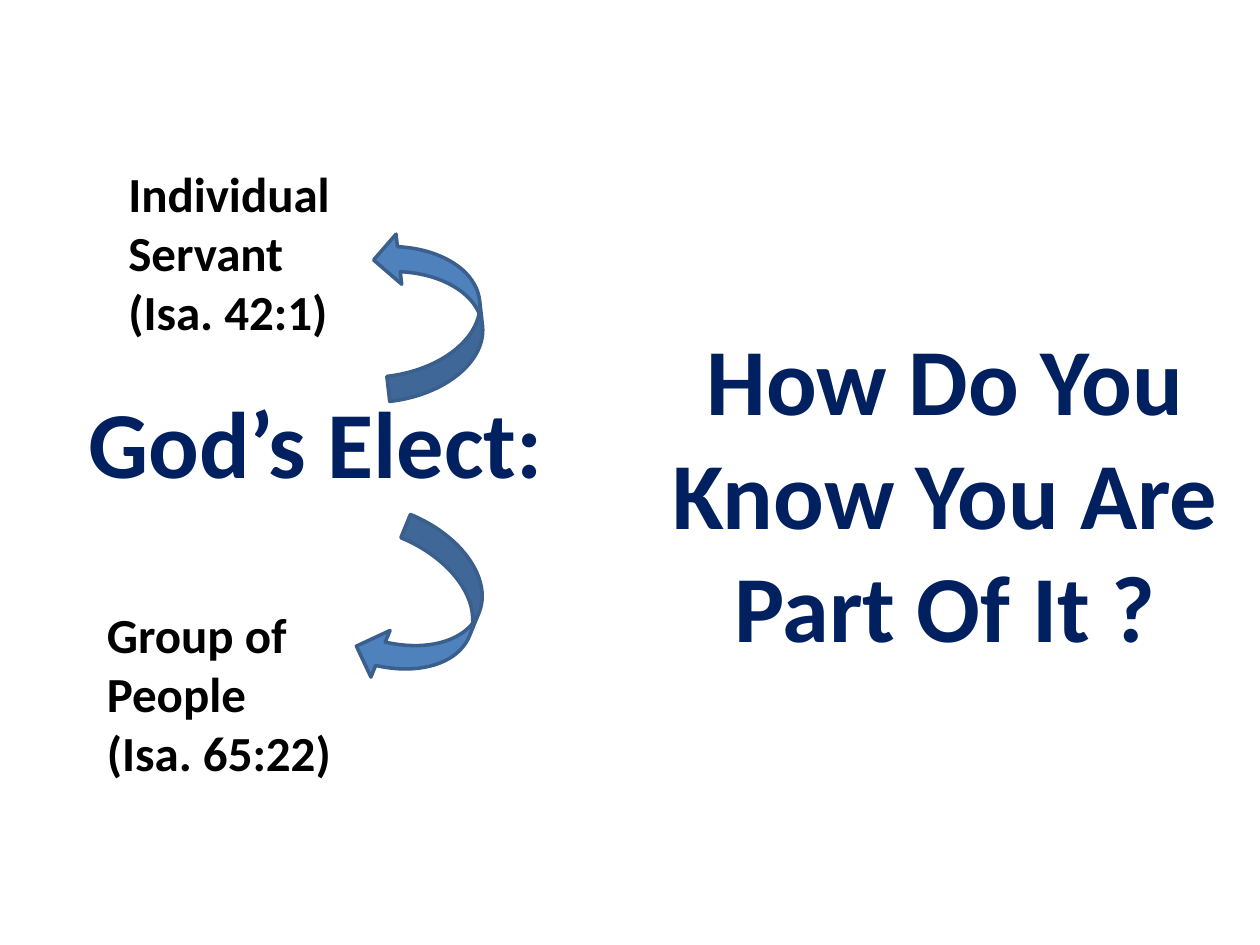
"""Builds the God's Elect slide with two curved arrows and a question."""
from pptx import Presentation
from pptx import util as u
from pptx.dml.color import RGBColor
from pptx.enum import shapes, text

NAVY, BLACK, BLUE, EDGE = "002060", "000000", "4F81BD", "3A5F8C"
TITLE = ("God’s Elect: ", (0.58, 3, 4.02, 1.01), 54, NAVY, text.PP_ALIGN.CENTER, False)
LABELS = [
    ("How Do You Know You Are Part Of It ?", (5, 2.5, 5, 2.83), 54, NAVY, text.PP_ALIGN.CENTER, True),
    ("Individual Servant (Isa. 42:1)", (0.92, 1.25, 2.17, 1.51), 28, BLACK, text.PP_ALIGN.LEFT, True),
    ("Group of People (Isa. 65:22)", (0.75, 4.75, 2, 1.51), 28, BLACK, text.PP_ALIGN.LEFT, True),
]
ARROWS = [
    (shapes.MSO_SHAPE.CURVED_UP_ARROW, (2.75, 2.08, 1.33, 0.8), 263.5),
    (shapes.MSO_SHAPE.CURVED_DOWN_ARROW, (2.71, 4.45, 1.33, 0.8), 112.3),
]


def color(value):
    return RGBColor.from_string(value)


def inches(box):
    return [u.Inches(v) for v in box]


def write(sp, words, box, size, ink, align, wrap):
    sp.left, sp.top, sp.width, sp.height = inches(box)
    tf = sp.text_frame
    tf.word_wrap = wrap
    tf.auto_size = text.MSO_AUTO_SIZE.SHAPE_TO_FIT_TEXT
    tf.vertical_anchor = text.MSO_ANCHOR.TOP
    p = tf.paragraphs[0]
    p.alignment = align
    r = p.add_run()
    r.text = words
    r.font.name, r.font.size, r.font.bold = "Calibri", u.Pt(size), True
    r.font.color.rgb = color(ink)


def add_arrow(s, kind, box, angle):
    sp = s.shapes.add_shape(kind, *inches(box))
    sp.rotation = angle
    sp.shadow.inherit = False
    sp.fill.solid()
    sp.fill.fore_color.rgb = color(BLUE)
    sp.line.color.rgb = color(EDGE)
    sp.line.width = u.Pt(2)


def main():
    prs = Presentation()
    prs.slide_width, prs.slide_height = inches((10, 7.5))
    s = prs.slides.add_slide(prs.slide_layouts[5])
    write(s.shapes.title, *TITLE)
    for arrow in ARROWS:
        add_arrow(s, *arrow)
    for label in LABELS:
        write(s.shapes.add_textbox(*inches(label[1])), *label)
    prs.save("out.pptx")


if __name__ == "__main__":
    main()
